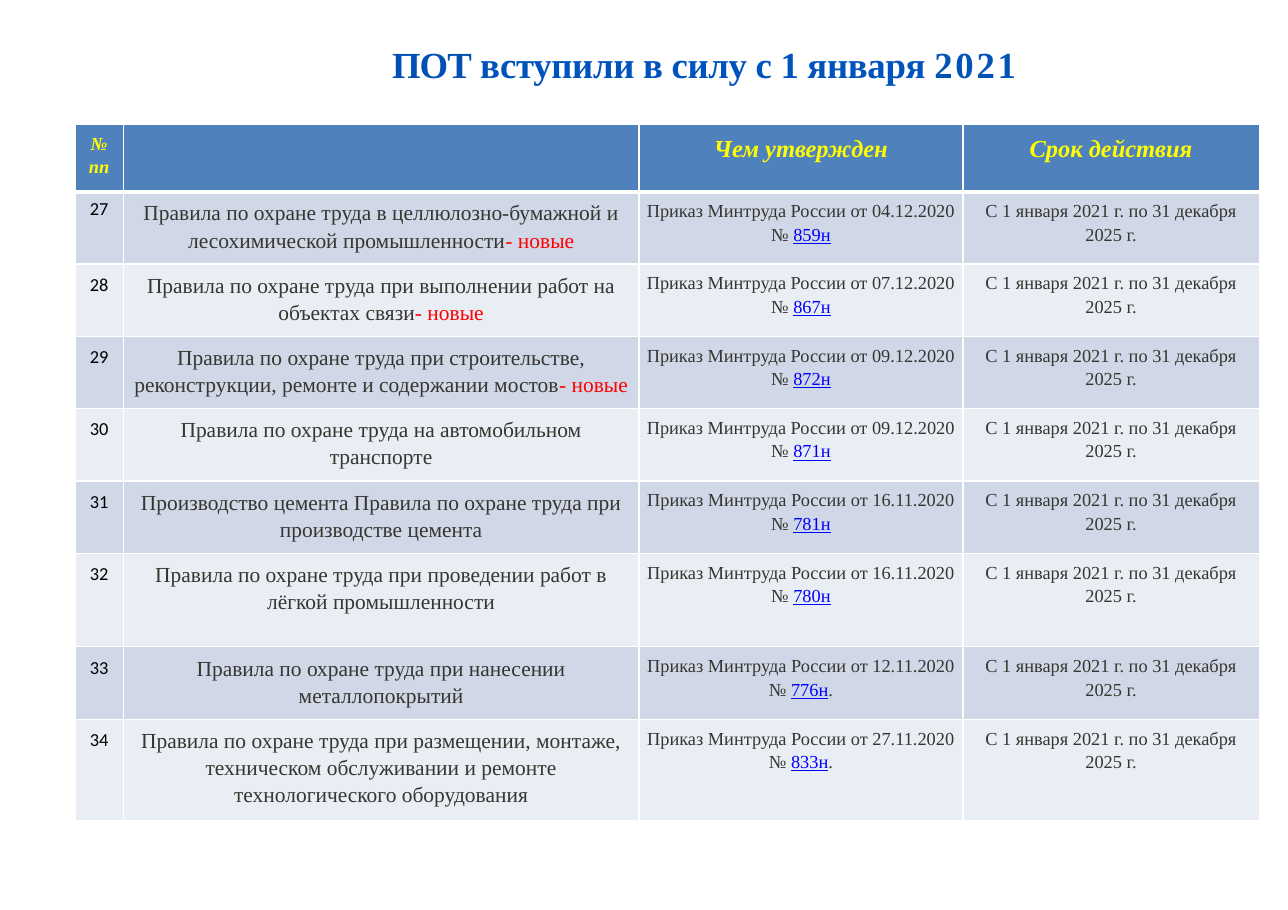
from dataclasses import dataclass

from lxml.etree import SubElement
from pptx import Presentation
from pptx.dml.color import RGBColor
from pptx.enum.text import MSO_AUTO_SIZE as AutoSize, PP_ALIGN as Align
from pptx.oxml.ns import qn
from pptx.util import Inches, Pt

SERIF, SANS = "Times New Roman", "Calibri"
WHITE, BLACK, DARK, RED, LINK = "FFFFFF", "000000", "363530", "FF0000", "0000FF"
YELLOW, HEADER_FILL = "FFFF00", "4F81BD"
BAND_FILLS = ("D0D8E8", "E9EDF4")
PERIOD = "С 1 января 2021 г. по 31 декабря 2025 г."
COLUMN_WIDTHS = (0.44, 4.68, 2.94, 2.69)
HEADER_HEIGHT = 0.61


@dataclass
class Span:
    text: str
    color: str
    underline: bool = False
    spacing: float = 0


@dataclass
class Rule:
    number: int
    name: str
    date: str
    order: str
    is_new: bool = False
    ending: str = ""
    height: float = 0.65


TITLE = (
    Span("ПОТ ", "0350B5", spacing=-0.6),
    Span("вступили в силу с 1 января ", "0052BD", spacing=-0.2),
    Span("2021", "0054B6", spacing=1.8),
)
HEADERS = (("№ пп", 12), ("", 16), ("Чем утвержден", 16), ("Срок действия", 16))
RULES = (
    Rule(27, "Правила по охране труда в целлюлозно-бумажной и лесохимической промышленности",
         "04.12.2020", "859н", is_new=True),
    Rule(28, "Правила по охране труда при выполнении работ на объектах связи",
         "07.12.2020", "867н", is_new=True),
    Rule(29, "Правила по охране труда при строительстве, реконструкции, ремонте и содержании мостов",
         "09.12.2020", "872н", is_new=True),
    Rule(30, "Правила по охране труда на автомобильном транспорте", "09.12.2020", "871н"),
    Rule(31, "Производство цемента Правила по охране труда при производстве цемента",
         "16.11.2020", "781н"),
    Rule(32, "Правила по охране труда при проведении работ в лёгкой промышленности",
         "16.11.2020", "780н", height=0.85),
    Rule(33, "Правила по охране труда при нанесении металлопокрытий",
         "12.11.2020", "776н", ending="."),
    Rule(34, "Правила по охране труда при размещении, монтаже, техническом обслуживании "
         "и ремонте технологического оборудования", "27.11.2020", "833н", ending=".", height=0.91),
)


def rgb(color: str) -> RGBColor:
    return RGBColor.from_string(color)


def write(para, spans, size: float, font: str = SERIF, bold: bool = False,
          italic: bool = False, line_spacing: float = 1.15) -> None:
    para.alignment = Align.CENTER
    para.line_spacing = line_spacing
    para.font.name, para.font.size = font, Pt(size)
    para.font.bold, para.font.italic = bold, italic
    for span in spans:
        run = para.add_run()
        run.text = span.text
        run.font.color.rgb = rgb(span.color)
        if span.underline:
            run.font.underline = True
        if span.spacing:
            run.font._element.set("spc", str(round(span.spacing * 100)))


def style_cell(cell, fill: str, top: float = 1, bottom: float = 1) -> None:
    cell.margin_left = cell.margin_right = Inches(0.06)
    cell.margin_top = cell.margin_bottom = Inches(0.06)
    properties = cell._tc.get_or_add_tcPr()
    for side, width in (("L", 1), ("R", 1), ("T", top), ("B", bottom)):
        line = SubElement(properties, qn(f"a:ln{side}"), w=str(Pt(width)))
        SubElement(SubElement(line, qn("a:solidFill")), qn("a:srgbClr"), val=WHITE)
    cell.fill.solid()
    cell.fill.fore_color.rgb = rgb(fill)


def add_title(page) -> None:
    box = page.shapes.add_textbox(Inches(2.18), Inches(0.3), Inches(8.42), Inches(0.5))
    frame = box.text_frame
    frame.word_wrap = True
    frame.auto_size = AutoSize.SHAPE_TO_FIT_TEXT
    frame.margin_top, frame.margin_bottom = Inches(0.08), Inches(0.03)
    write(frame.paragraphs[0], TITLE, 24, bold=True, line_spacing=1.0)


def fill_rule_row(cells, rule: Rule, index: int) -> None:
    for cell in cells:
        style_cell(cell, BAND_FILLS[index % 2], top=1 if index else 3)
    number, name, order, period = (cell.text_frame.paragraphs[0] for cell in cells)

    write(number, [Span(str(rule.number), BLACK)], 12, SANS,
          line_spacing=1.15 if index else 1.0)

    name_spans = [Span(rule.name, DARK)]
    if rule.is_new:
        name_spans.append(Span("- новые", RED))
    write(name, name_spans, 14)

    order_spans = [Span(f"Приказ Минтруда России от {rule.date} № ", DARK),
                   Span(rule.order, LINK, underline=True)]
    if rule.ending:
        order_spans.append(Span(rule.ending, DARK))
    write(order, order_spans, 12)

    write(period, [Span(PERIOD, DARK)], 12)


def add_rules_table(page) -> None:
    heights = [HEADER_HEIGHT] + [rule.height for rule in RULES]
    table = page.shapes.add_table(
        len(heights), len(COLUMN_WIDTHS), Inches(0.68), Inches(1.13),
        Inches(sum(COLUMN_WIDTHS)), Inches(sum(heights))).table
    for column, width in zip(table.columns, COLUMN_WIDTHS):
        column.width = Inches(width)
    for row, height in zip(table.rows, heights):
        row.height = Inches(height)

    # Header row
    for cell, (label, size) in zip(table.rows[0].cells, HEADERS):
        style_cell(cell, HEADER_FILL, bottom=3)
        if label:
            write(cell.text_frame.paragraphs[0], [Span(label, YELLOW)], size,
                  bold=True, italic=True)

    # One banded row per rule
    for index, rule in enumerate(RULES):
        fill_rule_row(list(table.rows[index + 1].cells), rule, index)


def main() -> None:
    deck = Presentation()
    deck.slide_width, deck.slide_height = Inches(11.69), Inches(8.26)
    page = deck.slides.add_slide(deck.slide_layouts[6])
    add_title(page)
    add_rules_table(page)
    deck.save("out.pptx")


if __name__ == "__main__":
    main()
